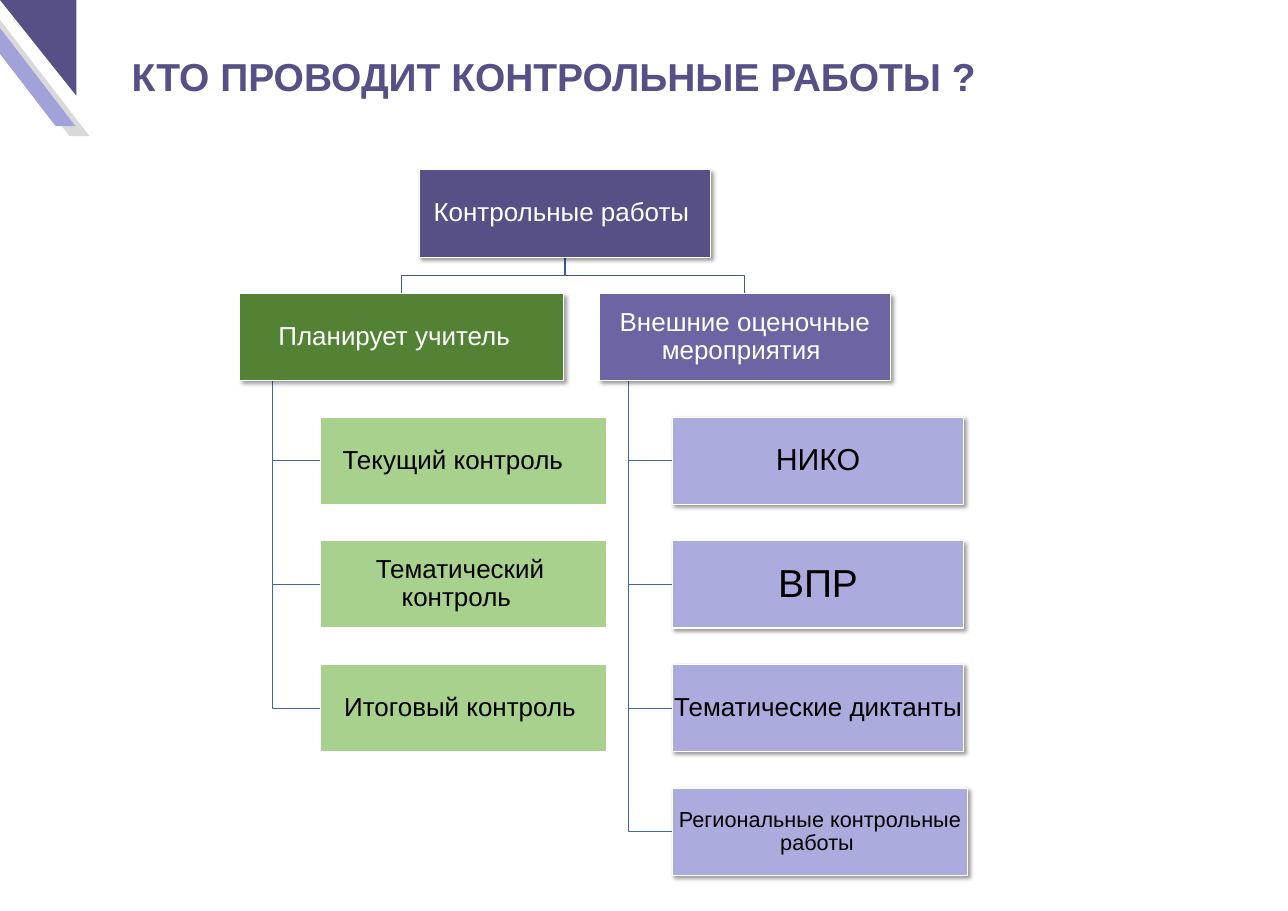
from dataclasses import dataclass

from lxml import etree
from pptx import Presentation
from pptx.dml.color import RGBColor
from pptx.enum.shapes import MSO_SHAPE
from pptx.enum.text import MSO_ANCHOR, MSO_AUTO_SIZE, PP_ALIGN
from pptx.oxml.ns import qn
from pptx.util import Cm, Pt

RECTANGLE = MSO_SHAPE.RECTANGLE
PARALLELOGRAM = MSO_SHAPE.PARALLELOGRAM
RIGHT_TRIANGLE = MSO_SHAPE.RIGHT_TRIANGLE
TOP = MSO_ANCHOR.TOP
MIDDLE = MSO_ANCHOR.MIDDLE
LEFT = PP_ALIGN.LEFT
CENTER = PP_ALIGN.CENTER
NO_AUTOFIT = MSO_AUTO_SIZE.NONE

TITLE_ONLY = 5
FIRST_ROW = 5.54
ROW_STEP = 4.03
BOX_HEIGHT = 2.84
TRUNK_SHARE = 0.1
INSET = 0.05


@dataclass(frozen=True)
class Theme:
    font: str = "Arial"
    title_size: int = 36
    text_size: int = 24
    large_size: int = 28
    largest_size: int = 36
    small_size: int = 20
    line_spacing: float = 0.9
    violet: str = "565087"
    root: str = "575086"
    external: str = "6C65A3"
    external_item: str = "ABABDD"
    teacher: str = "548235"
    teacher_item: str = "A9D18E"
    stripe: str = "A2A2DA"
    stripe_shade: str = "D9D9D9"
    upper_link: str = "365B9D"
    lower_link: str = "3E67B2"
    light: str = "FFFFFF"
    dark: str = "000000"


THEME = Theme()


@dataclass(frozen=True)
class Node:
    text: str
    row: int
    left: float
    width: float
    fill: str
    color: str = THEME.dark
    size: int = THEME.text_size
    shadow: bool = True
    right_indent: float = 0

    @property
    def top(self):
        return FIRST_ROW + self.row * ROW_STEP

    @property
    def bottom(self):
        return self.top + BOX_HEIGHT

    @property
    def center(self):
        return self.left + self.width / 2

    @property
    def middle(self):
        return self.top + BOX_HEIGHT / 2


ROOT = Node("Контрольные работы ", 0, 13.67, 9.5, THEME.root, THEME.light)
TEACHER = Node("Планирует учитель ", 1, 7.82, 10.54, THEME.teacher, THEME.light,
               right_indent=0.24)
EXTERNAL = Node("Внешние оценочные мероприятия ", 1, 19.53, 9.5, THEME.external,
                THEME.light)

TEACHER_ITEMS = [
    Node(text, row, 10.44, 9.35, THEME.teacher_item, shadow=False, right_indent=indent)
    for row, (text, indent) in enumerate([
        ("Текущий контроль ", 0.47),
        ("Тематический контроль ", 0.24),
        ("Итоговый контроль ", 0),
    ], start=2)
]
EXTERNAL_ITEMS = [
    Node(text, row, 21.92, width, THEME.external_item, size=size)
    for row, (text, width, size) in enumerate([
        ("НИКО", 9.5, THEME.large_size),
        ("ВПР", 9.5, THEME.largest_size),
        ("Тематические диктанты ", 9.5, THEME.text_size),
        ("Региональные контрольные работы ", 9.63, THEME.small_size),
    ], start=2)
]
BRANCHES = [(EXTERNAL, EXTERNAL_ITEMS), (TEACHER, TEACHER_ITEMS)]


def rgb(color):
    return RGBColor.from_string(color)


def write_text(frame, text, size, color, align, bold=False):
    paragraph = frame.paragraphs[0]
    paragraph.alignment = align
    paragraph.line_spacing = THEME.line_spacing
    run = paragraph.add_run()
    run.text = text
    run.font.name = THEME.font
    run.font.size = Pt(size)
    run.font.bold = bold
    run.font.color.rgb = rgb(color)


def add_title(slide, text):
    title = slide.shapes.title
    title.left, title.top = Cm(4.04), Cm(1.75)
    title.width, title.height = Cm(33.27), Cm(1.8)
    frame = title.text_frame
    frame.auto_size = NO_AUTOFIT
    frame.vertical_anchor = TOP
    write_text(frame, text, THEME.title_size, THEME.violet, LEFT, bold=True)


def add_corner_shape(slide, kind, left, top, width, height, color, flips):
    corner = slide.shapes.add_shape(kind, Cm(left), Cm(top), Cm(width), Cm(height))
    corner.shadow.inherit = False
    corner.fill.solid()
    corner.fill.fore_color.rgb = rgb(color)
    corner.line.fill.background()
    for flip in flips:
        corner.element.spPr.find(qn("a:xfrm")).set(flip, "1")
    return corner


def add_corner(slide):
    for left, top, color in [(-0.89, 0.33, THEME.stripe_shade), (-1.35, 0, THEME.stripe)]:
        stripe = add_corner_shape(slide, PARALLELOGRAM, left, top, 3.81, 4.11, color,
                                  ["flipH"])
        stripe.adjustments[0] = 0.83
    add_corner_shape(slide, RIGHT_TRIANGLE, 0, 0, 2.49, 3.12, THEME.violet,
                     ["flipH", "flipV"])


def add_link(slide, points, color):
    start, *rest = [(Cm(x), Cm(y)) for x, y in points]
    builder = slide.shapes.build_freeform(*start)
    builder.add_line_segments(rest, close=False)
    link = builder.convert_to_shape()
    link.shadow.inherit = False
    link.fill.background()
    link.line.color.rgb = rgb(color)
    link.line.width = Pt(1)


def link_root(slide, child):
    bend = (ROOT.bottom + child.top) / 2
    add_link(slide, [(ROOT.center, ROOT.bottom), (ROOT.center, bend),
                     (child.center, bend), (child.center, child.top)], THEME.upper_link)


def link_item(slide, parent, item):
    trunk = parent.left + parent.width * TRUNK_SHARE
    add_link(slide, [(trunk, parent.bottom), (trunk, item.middle),
                     (item.left, item.middle)], THEME.lower_link)


def add_shadow(box):
    effects = box.element.spPr.find(qn("a:effectLst"))
    shadow = etree.SubElement(effects, qn("a:outerShdw"), blurRad=str(Pt(4)),
                              dist=str(Pt(3)), dir="2700000", algn="tl",
                              rotWithShape="0")
    color = etree.SubElement(shadow, qn("a:srgbClr"), val=THEME.dark)
    etree.SubElement(color, qn("a:alpha"), val="40000")


def add_node(slide, node):
    box = slide.shapes.add_shape(RECTANGLE, Cm(node.left), Cm(node.top),
                                 Cm(node.width), Cm(BOX_HEIGHT))
    box.shadow.inherit = False
    box.fill.solid()
    box.fill.fore_color.rgb = rgb(node.fill)
    box.line.color.rgb = rgb(THEME.light)
    box.line.width = Pt(1)
    if node.shadow:
        add_shadow(box)
    frame = box.text_frame
    frame.word_wrap = True
    frame.vertical_anchor = MIDDLE
    frame.margin_left = frame.margin_top = frame.margin_bottom = Cm(INSET)
    frame.margin_right = Cm(INSET + node.right_indent)
    write_text(frame, node.text, node.size, node.color, CENTER)


def main():
    deck = Presentation()
    deck.slide_width, deck.slide_height = Cm(41.99), Cm(29.69)
    slide = deck.slides.add_slide(deck.slide_layouts[TITLE_ONLY])
    add_corner(slide)
    add_title(slide, "КТО ПРОВОДИТ КОНТРОЛЬНЫЕ РАБОТЫ ?")
    for parent, items in BRANCHES:
        link_root(slide, parent)
        for item in items:
            link_item(slide, parent, item)
    add_node(slide, ROOT)
    for parent, items in BRANCHES:
        for node in [parent, *items]:
            add_node(slide, node)
    deck.save("out.pptx")


if __name__ == "__main__":
    main()
